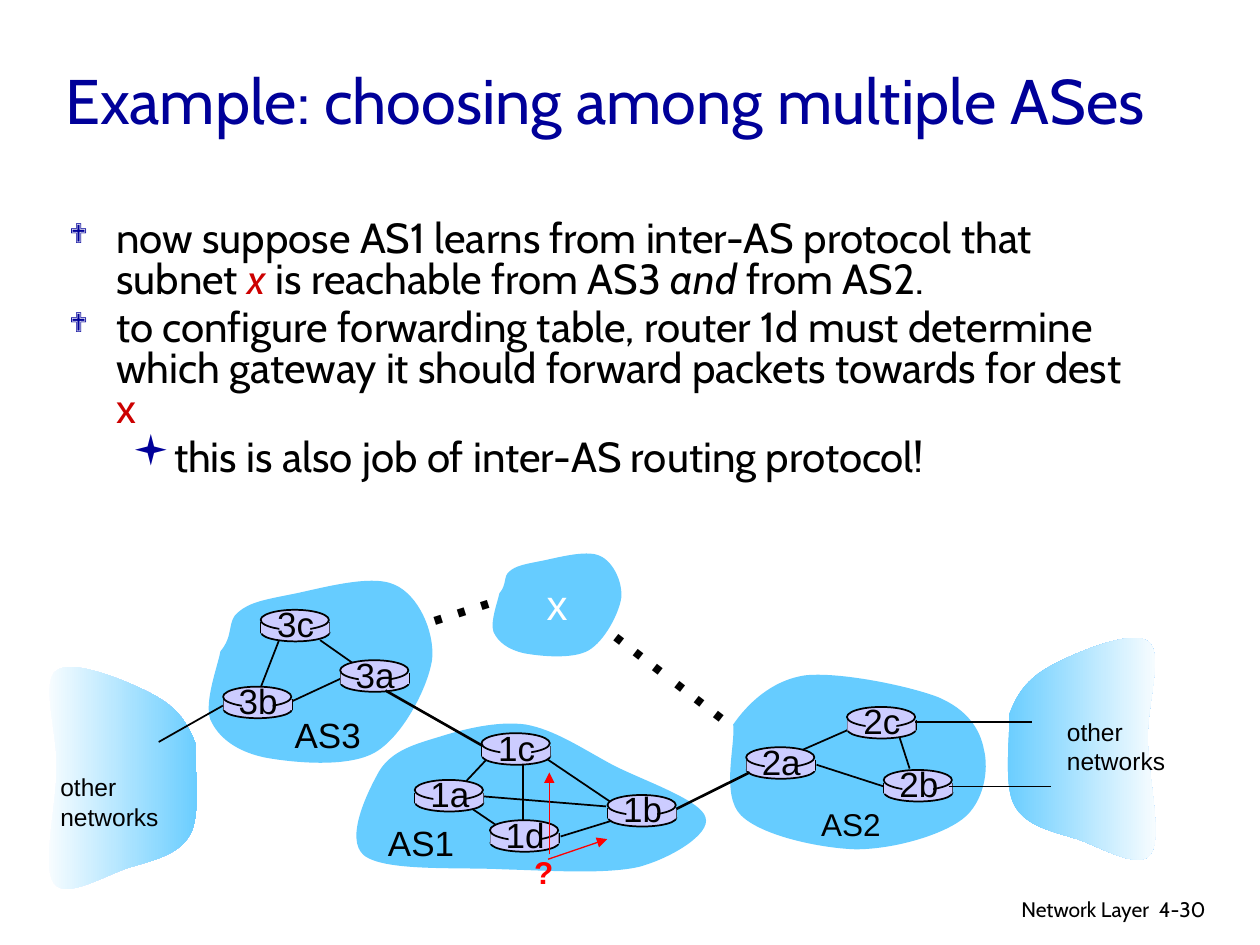
from lxml.etree import SubElement
from pptx import Presentation
from pptx.dml.color import RGBColor
from pptx.enum.shapes import MSO_CONNECTOR as Connector, MSO_SHAPE as Shape
from pptx.enum.text import MSO_ANCHOR as Anchor, MSO_AUTO_SIZE as AutoSize, PP_ALIGN as Align
from pptx.oxml.ns import qn
from pptx.util import Pt

BLACK, WHITE, NAVY, CRIMSON, RED = "000000", "FFFFFF", "000099", "CC0000", "FF0000"
SKY, LILAC = "66CCFF", "CCCCFF"

# Each cloud: a start point, then cubic segments (control, control, end).
OTHER = [(576.7, 408.2),
         (581, 396.7), (586.8, 388.1), (599.8, 380.9),
         (612.7, 373.7), (646.6, 359.3), (655.9, 366.5),
         (665.3, 373), (655.2, 402.5), (655.9, 422.6),
         (655.9, 443.5), (664.6, 478.8), (657.4, 488.2),
         (650.9, 497.5), (628.6, 483.8), (615.6, 479.5),
         (601.9, 475.2), (586.1, 472.3), (579.6, 460.1),
         (573.1, 448.6), (577.4, 419), (576.7, 408.2)]
AS2 = [(419, 414),
       (427, 402.5), (440.6, 388.8), (460.1, 385.9),
       (479.5, 383.8), (518.4, 391.7), (535.7, 398.2),
       (553, 405.4), (560.2, 416.9), (562.3, 428.4),
       (565.2, 439.9), (562.3, 458.6), (550.1, 468),
       (537.8, 477.4), (510.5, 485.3), (488.9, 485.3),
       (468, 484.6), (434.9, 477.4), (423.4, 465.8),
       (411.8, 454.3), (420.5, 424.8), (419, 414)]
AS3 = [(126, 372.2),
       (133.9, 362.9), (129.6, 355), (136.1, 349.9),
       (142.6, 344.2), (151.2, 342.7), (165.6, 339.8),
       (180.7, 337), (211.7, 327.6), (225.4, 334.1),
       (239, 339.8), (248.4, 360.7), (247, 376.6),
       (244.8, 392.4), (230.4, 420.5), (214.6, 429.8),
       (198.7, 439.2), (165.6, 435.6), (150.5, 432.7),
       (134.6, 429.1), (124.6, 421.2), (120.2, 411.1),
       (116.6, 401), (124.6, 380.2), (126, 372.2)]
AS1 = [(216.7, 440.6),
       (223.9, 429.1), (236.2, 425.5), (250.6, 421.2),
       (264.2, 416.9), (283.7, 411.8), (300.2, 414),
       (316.8, 416.9), (332.6, 427.7), (349.9, 437),
       (366.5, 445.7), (401, 457.2), (403.2, 467.3),
       (406.1, 476.6), (383.8, 490.3), (365, 495.4),
       (345.6, 499.7), (313.9, 497.5), (288, 496.8),
       (262.1, 495.4), (220.3, 498.2), (208.1, 488.9),
       (196.6, 479.5), (210.2, 452.2), (216.7, 440.6)]
SUBNET_X = [(0.576 * x + 212.8, 0.565 * y + 128.8) for x, y in AS3]
OTHER_LEFT = [(688.3 - x, y + 16.6) for x, y in OTHER]

LINKS = [
    (166.3, 401, 197.3, 386.6), (202.3, 379.4, 182.9, 365.8), (159.8, 365, 148.3, 394.6),
    (278.6, 433.4, 266.4, 446.4), (298.8, 436.3, 298.8, 472.3), (311, 432.7, 350.6, 459.4),
    (350.6, 468.7, 320.4, 478), (346.3, 460.8, 275, 455), (267.8, 460.8, 283.7, 471.6),
    (452.2, 431.3, 486.7, 416.2), (466.6, 437, 504.7, 449.3), (514, 421.2, 519.8, 439.2)]
OUTSIDE_LINKS = [
    (522.7, 412.6, 589.7, 412.6, 0.75), (542.2, 449.3, 600.5, 449.3, 0.75),
    (127.4, 403.2, 90.7, 424, 1), (386.6, 462.2, 428.4, 441.4, 1.5),
    (220.3, 394.6, 275.8, 426.2, 1.5)]
ROUTERS = {
    "3b": (127.5, 392.4), "3c": (149, 348.5), "3a": (194.4, 377.3),
    "1c": (275.2, 419), "1a": (237, 445.7), "1d": (280, 468.7), "1b": (347.2, 454.3),
    "2a": (426.4, 427), "2c": (484, 404), "2b": (505, 440)}


def rgb(code):
    return RGBColor.from_string(code)


def assign(target, values):
    for name, value in values.items():
        setattr(target, name, value)


def curve_segments(freeform):
    """Turn each three straight segments of the outline into one cubic segment."""
    lines = list(freeform._element.iter(qn("a:lnTo")))
    outline = lines[0].getparent()
    for i in range(0, len(lines), 3):
        cubic = SubElement(outline, qn("a:cubicBezTo"))
        lines[i].addprevious(cubic)
        for line in lines[i:i + 3]:
            cubic.append(line[0])
            outline.remove(line)


class Sketch:
    def __init__(self, slide, label_font="Arial", prose_font="Cabin"):
        self.shapes = slide.shapes
        self.label_font, self.prose_font = label_font, prose_font

    def run(self, paragraph, words, size, color=BLACK, font=None, **style):
        run = paragraph.add_run()
        run.text = words
        assign(run.font, {"name": font or self.label_font, "size": Pt(size), **style})
        run.font.color.rgb = rgb(color)

    def frame(self, box, within=None, rotation=0, **layout):
        holder = (within or self.shapes).add_textbox(*map(Pt, box))
        holder.rotation = rotation
        assign(holder.text_frame, {"word_wrap": True, **layout})
        return holder.text_frame

    def prose(self, box, words, size, color=BLACK, align=Align.LEFT, **layout):
        paragraph = self.frame(box, **layout).paragraphs[0]
        paragraph.alignment = align
        self.run(paragraph, words, size, color, self.prose_font)

    def label(self, box, words, size, color=BLACK, align=Align.LEFT, within=None,
              rotation=0, **style):
        frame = self.frame(box, within, rotation, word_wrap=False,
                           auto_size=AutoSize.SHAPE_TO_FIT_TEXT)
        for i, line in enumerate(words.split("\n")):
            paragraph = frame.add_paragraph() if i else frame.paragraphs[0]
            paragraph.alignment = align
            self.run(paragraph, line, size, color, **style)

    def bullet(self, paragraph, mark, margin, hanging, pieces, percent=None):
        assign(paragraph, {"line_spacing": 0.8, "space_before": Pt(4.8)})
        props = paragraph._p.get_or_add_pPr()
        props.set("marL", str(Pt(margin)))
        props.set("indent", str(-Pt(hanging)))
        tint = SubElement(props, qn("a:buClr"))
        SubElement(tint, qn("a:srgbClr"), val=NAVY)
        if percent:
            SubElement(props, qn("a:buSzPct"), val=str(percent * 1000))
        SubElement(props, qn("a:buFont"), typeface="Wingdings", charset="2")
        SubElement(props, qn("a:buChar"), char=mark)
        for words, style in pieces:
            self.run(paragraph, words, 24, font=self.prose_font, **style)

    def cloud(self, points, stops=None):
        fine = [(100 * x, 100 * y) for x, y in points]
        builder = self.shapes.build_freeform(*fine[0], scale=Pt(0.01))
        builder.add_line_segments(fine[1:], close=True)
        cloud = builder.convert_to_shape()
        curve_segments(cloud)
        cloud.shadow.inherit = False
        cloud.line.fill.background()
        if stops:
            cloud.fill.gradient()
            cloud.fill.gradient_angle = 0
            for position, (stop, color) in enumerate(zip(cloud.fill.gradient_stops, stops)):
                stop.position = position
                stop.color.rgb = rgb(color)
        else:
            cloud.fill.solid()
            cloud.fill.fore_color.rgb = rgb(SKY)

    def link(self, x1, y1, x2, y2, width=1, color=BLACK, arrow=False, within=None):
        ends = map(Pt, (x1, y1, x2, y2))
        link = (within or self.shapes).add_connector(Connector.STRAIGHT, *ends)
        link.line.width = Pt(width)
        link.line.color.rgb = rgb(color)
        if arrow:
            SubElement(link.line._get_or_add_ln(), qn("a:tailEnd"), type="triangle")
        SubElement(link._element.spPr, qn("a:effectLst"))

    def solid(self, kind, box, within, outlined=False):
        part = within.add_shape(kind, *map(Pt, box))
        part.shadow.inherit = False
        part.fill.solid()
        part.fill.fore_color.rgb = rgb(LILAC)
        if outlined:
            part.line.width = Pt(1)
            part.line.color.rgb = rgb(BLACK)
        else:
            part.line.fill.background()

    def router(self, name, x, y):
        """Draw a labelled disc whose top ellipse starts at x, y."""
        parts = self.shapes.add_group_shape().shapes
        self.solid(Shape.OVAL, (x + 0.3, y + 8, 39, 10), parts, outlined=True)
        for side in (x + 0.3, x + 39.3):
            self.link(side, y + 7.2, side, y + 13.2, within=parts)
        self.solid(Shape.RECTANGLE, (x + 0.3, y + 7.2, 39, 6.3), parts)
        self.solid(Shape.OVAL, (x, y, 39, 11.5), parts, outlined=True)
        self.solid(Shape.RECTANGLE, (x + 10.7, y + 1.5, 17.6, 15), parts)
        self.label((x + 1, y - 7.6, 38, 31), name, 20, align=Align.CENTER, within=parts)


def main():
    deck = Presentation()
    assign(deck, {"slide_width": Pt(720), "slide_height": Pt(540)})
    sketch = Sketch(deck.slides.add_slide(deck.slide_layouts[6]))

    sketch.prose((435.6, 509, 228.2, 22.3), "Network Layer", 12, align=Align.RIGHT)
    sketch.prose((655.2, 509, 53.3, 21.6), "4-30", 12)
    sketch.prose((30.2, 19.4, 690.5, 74.9), "Example: choosing among multiple ASes", 36, NAVY,
                 vertical_anchor=Anchor.MIDDLE)

    body = sketch.frame((32.4, 123.1, 629.3, 216.7))
    sketch.bullet(body.paragraphs[0], "❖", 27, 27, [
        ("now suppose AS1 learns from inter-AS protocol that subnet ", {}),
        ("x", {"color": CRIMSON, "italic": True}),
        (" is reachable from AS3 ", {}), ("and", {"italic": True}), (" from AS2.", {})], 65)
    sketch.bullet(body.add_paragraph(), "❖", 27, 27, [
        ("to configure forwarding table, router 1d must determine which gateway "
         "it should forward packets towards for dest ", {}),
        ("x", {"color": CRIMSON})], 65)
    sub_point = body.add_paragraph()
    sub_point.level = 1
    sketch.bullet(sub_point, "▪", 58.5, 22.5, [
        ("this is also job of inter-AS routing protocol!", {})])

    sketch.cloud(OTHER, (SKY, WHITE))
    sketch.cloud(OTHER_LEFT, (WHITE, SKY))
    for system in (AS2, AS3, AS1, SUBNET_X):
        sketch.cloud(system)
    for ends in LINKS:
        sketch.link(*ends)
    for name, corner in ROUTERS.items():
        sketch.router(name, *corner)
    for ends in OUTSIDE_LINKS:
        sketch.link(*ends)

    sketch.label((161.3, 403.9, 53, 31), "AS3", 20)
    sketch.label((462.2, 456.5, 49, 28.8), "AS2", 18)
    sketch.label((214.6, 465.8, 53, 31), "AS1", 20)
    for corner in ((602.6, 406.1), (27.4, 437.8)):
        sketch.label((*corner, 71, 41), "other\nnetworks", 14)
    sketch.label((305.3, 326.9, 27, 36), "x", 24, WHITE)
    sketch.label((340.4, 346.3, 104, 59.8), "……", 44, rotation=37.7)
    sketch.label((230.3, 305.3, 60, 59.8), "…", 44, rotation=342.3)
    for ends in ((313.2, 491, 347, 479.5), (313.9, 488.2, 313.9, 441.4)):
        sketch.link(*ends, width=0.75, color=RED, arrow=True)
    sketch.label((298.1, 483.8, 25.2, 28.8), "?", 18, RED, bold=True)

    deck.save("out.pptx")


if __name__ == "__main__":
    main()
